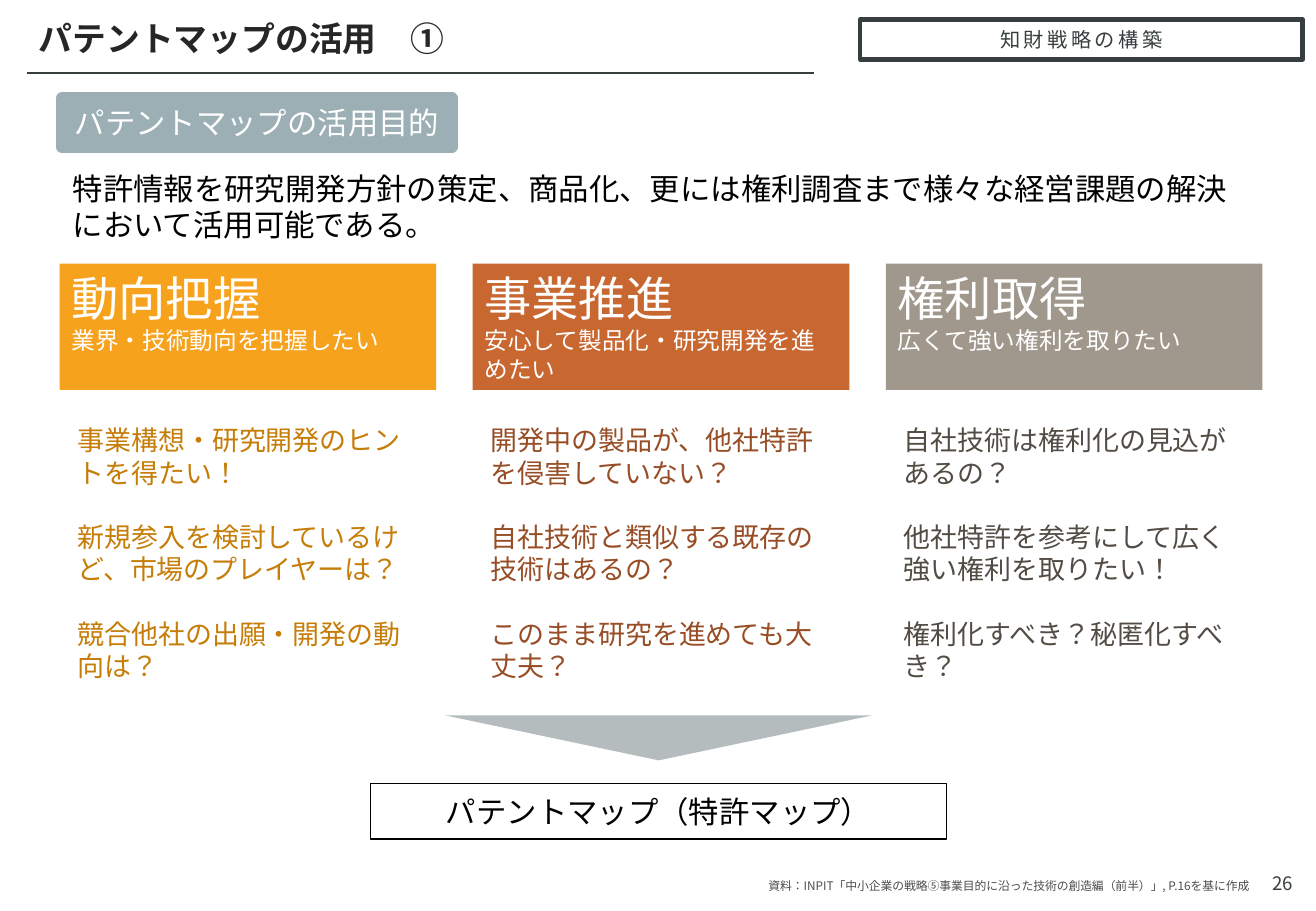
from pptx import Presentation
from pptx.dml.color import RGBColor
from pptx.enum.lang import MSO_LANGUAGE_ID
from pptx.enum.shapes import MSO_CONNECTOR, MSO_SHAPE
from pptx.enum.text import MSO_ANCHOR, PP_ALIGN
from pptx.oxml.ns import qn
from pptx.util import Pt
from lxml.etree import SubElement

EMU_PER_PX = 9144  # 100 px to the inch
FONT = "Noto Sans CJK JP"
LINE_RATIO = 1.2

WHITE = RGBColor(0xFF, 0xFF, 0xFF)
BLACK = RGBColor(0x00, 0x00, 0x00)
HEADING = RGBColor(0x26, 0x26, 0x26)
SLATE = RGBColor(0x38, 0x3E, 0x40)
SOURCE_GREY = RGBColor(0x4D, 0x4D, 0x4D)
LABEL_BLUE = RGBColor(0x9B, 0xAF, 0xB5)
ARROW_GREY = RGBColor(0xB4, 0xBC, 0xBE)
ORANGE = RGBColor(0xF6, 0xA2, 0x1D)
DARK_ORANGE = RGBColor(0xC6, 0x7D, 0x08)
RUST = RGBColor(0xC9, 0x67, 0x31)
DARK_RUST = RGBColor(0x97, 0x4D, 0x25)
TAUPE = RGBColor(0xA0, 0x98, 0x8C)
DARK_TAUPE = RGBColor(0x52, 0x4C, 0x44)

# Heading, subheading, questions, card colour, question colour
PURPOSES = [
    ("動向把握", "業界・技術動向を把握したい",
     ["事業構想・研究開発のヒントを得たい！",
      "新規参入を検討しているけど、市場のプレイヤーは？",
      "競合他社の出願・開発の動向は？"], ORANGE, DARK_ORANGE),
    ("事業推進", "安心して製品化・研究開発を進めたい",
     ["開発中の製品が、他社特許を侵害していない？",
      "自社技術と類似する既存の技術はあるの？",
      "このまま研究を進めても大丈夫？"], RUST, DARK_RUST),
    ("権利取得", "広くて強い権利を取りたい",
     ["自社技術は権利化の見込があるの？",
      "他社特許を参考にして広く強い権利を取りたい！",
      "権利化すべき？秘匿化すべき？"], TAUPE, DARK_TAUPE),
]


def px(value):
    return int(value * EMU_PER_PX)


def write(shape, lines, sizes, color, align=PP_ALIGN.LEFT,
          anchor=MSO_ANCHOR.TOP, gap=0, bold=False, margins=(10, 5)):
    """Fill a shape with one paragraph per line."""
    frame = shape.text_frame
    frame.word_wrap = True
    frame.vertical_anchor = anchor
    frame.margin_left = frame.margin_right = px(margins[0])
    frame.margin_top = frame.margin_bottom = px(margins[1])
    frame.text = "\n".join(lines)
    for index, (paragraph, size) in enumerate(zip(frame.paragraphs, sizes)):
        paragraph.alignment = align
        paragraph.line_spacing = Pt(size * LINE_RATIO)
        paragraph.space_before = Pt(gap if index else 0)
        for run in paragraph.runs:
            font = run.font
            font.size, font.bold, font.name = Pt(size), bold, FONT
            font.color.rgb = color
            font.language_id = MSO_LANGUAGE_ID.JAPANESE
            SubElement(font._element, qn("a:ea"), typeface=FONT)


def paint(shape, fill=None, line=None, width=1):
    if fill is None:
        shape.fill.background()
    else:
        shape.fill.solid()
        shape.fill.fore_color.rgb = fill
    if line is None:
        shape.line.fill.background()
    else:
        shape.line.color.rgb = line
        shape.line.width = Pt(width)


def add_block(slide, box, preset=MSO_SHAPE.RECTANGLE, **style):
    shape = slide.shapes.add_shape(preset, *map(px, box))
    shape.shadow.inherit = False
    paint(shape, **style)
    return shape


def add_text(slide, box, lines, sizes, color, **style):
    write(slide.shapes.add_textbox(*map(px, box)), lines, sizes, color, **style)


def add_header(slide, box):
    left, top, width, height = box
    # Section title in a frame
    title = slide.shapes.title
    title.left, title.top = px(left + 686), px(top + 6)
    title.width, title.height = px(364), px(33)
    paint(title, WHITE, SLATE, 2.5)
    write(title, ["知財戦略の構築"], [12], SLATE, align=PP_ALIGN.CENTER,
          anchor=MSO_ANCHOR.MIDDLE, margins=(20, 0))
    for run in title.text_frame.paragraphs[0].runs:
        run.font._element.set("spc", "200")
    # Page heading and rule
    add_text(slide, (left, top, 648, height), ["パテントマップの活用　①"], [20],
             HEADING, bold=True)
    bottom = px(top + height)
    rule = slide.shapes.add_connector(MSO_CONNECTOR.STRAIGHT, px(left), bottom,
                                      px(left + 648), bottom)
    rule.line.color.rgb = SLATE
    rule.line.width = Pt(1.5)
    SubElement(rule._element.spPr, qn("a:effectLst"))


def add_introduction(slide, box):
    left, top, width, height = box
    label = add_block(slide, (left + 1, top, 321, 40), fill=LABEL_BLUE,
                      line=LABEL_BLUE, width=7)
    write(label, ["パテントマップの活用目的"], [18], WHITE,
          align=PP_ALIGN.CENTER, anchor=MSO_ANCHOR.MIDDLE)
    add_text(slide, (left, top + 54, width, height - 54),
             ["特許情報を研究開発方針の策定、商品化、更には権利調査まで"
              "様々な経営課題の解決において活用可能である。"], [18], BLACK)


def add_purpose(slide, box, purpose):
    left, top, width, height = box
    heading, subheading, questions, card_color, question_color = purpose
    card = add_block(slide, (left, top, width, 104), fill=card_color)
    write(card, [heading, subheading], [28, 14], WHITE)
    add_text(slide, (left + 5, top + 127, width - 5, height - 127),
             questions, [16] * len(questions), question_color, gap=19)


def add_conclusion(slide, box):
    left, top, width, height = box
    arrow_width = 351
    arrow = add_block(slide, (left + (width - arrow_width) / 2, top, arrow_width, 37),
                      MSO_SHAPE.ISOSCELES_TRIANGLE, fill=ARROW_GREY)
    arrow.rotation = 180
    result = add_block(slide, (left, top + height - 46, width, 46), line=BLACK)
    write(result, ["パテントマップ（特許マップ）"], [18], BLACK,
          align=PP_ALIGN.CENTER, anchor=MSO_ANCHOR.MIDDLE)


def add_footer(slide, box):
    left, top, width, height = box
    add_text(slide, (left, top + 5, 474, 35),
             ["資料：INPIT「中小企業の戦略⑤事業目的に沿った技術の創造編（前半）」, P.16を基に作成"],
             [7], SOURCE_GREY, align=PP_ALIGN.RIGHT, anchor=MSO_ANCHOR.MIDDLE)
    add_text(slide, (left + width - 43, top, 43, height), ["26"], [11], SLATE,
             align=PP_ALIGN.CENTER, anchor=MSO_ANCHOR.MIDDLE, margins=(2, 5))


def main():
    presentation = Presentation()
    presentation.slide_width, presentation.slide_height = px(1083), px(750)
    slide = presentation.slides.add_slide(presentation.slide_layouts[5])
    add_header(slide, (22, 10, 1050, 50))
    add_introduction(slide, (50, 81, 989, 125))
    for column, purpose in enumerate(PURPOSES):
        add_purpose(slide, (49 + 340 * column, 217, 310, 353), purpose)
    add_conclusion(slide, (305, 589, 474, 102))
    add_footer(slide, (564, 707, 513, 40))
    presentation.save("out.pptx")


if __name__ == "__main__":
    main()
